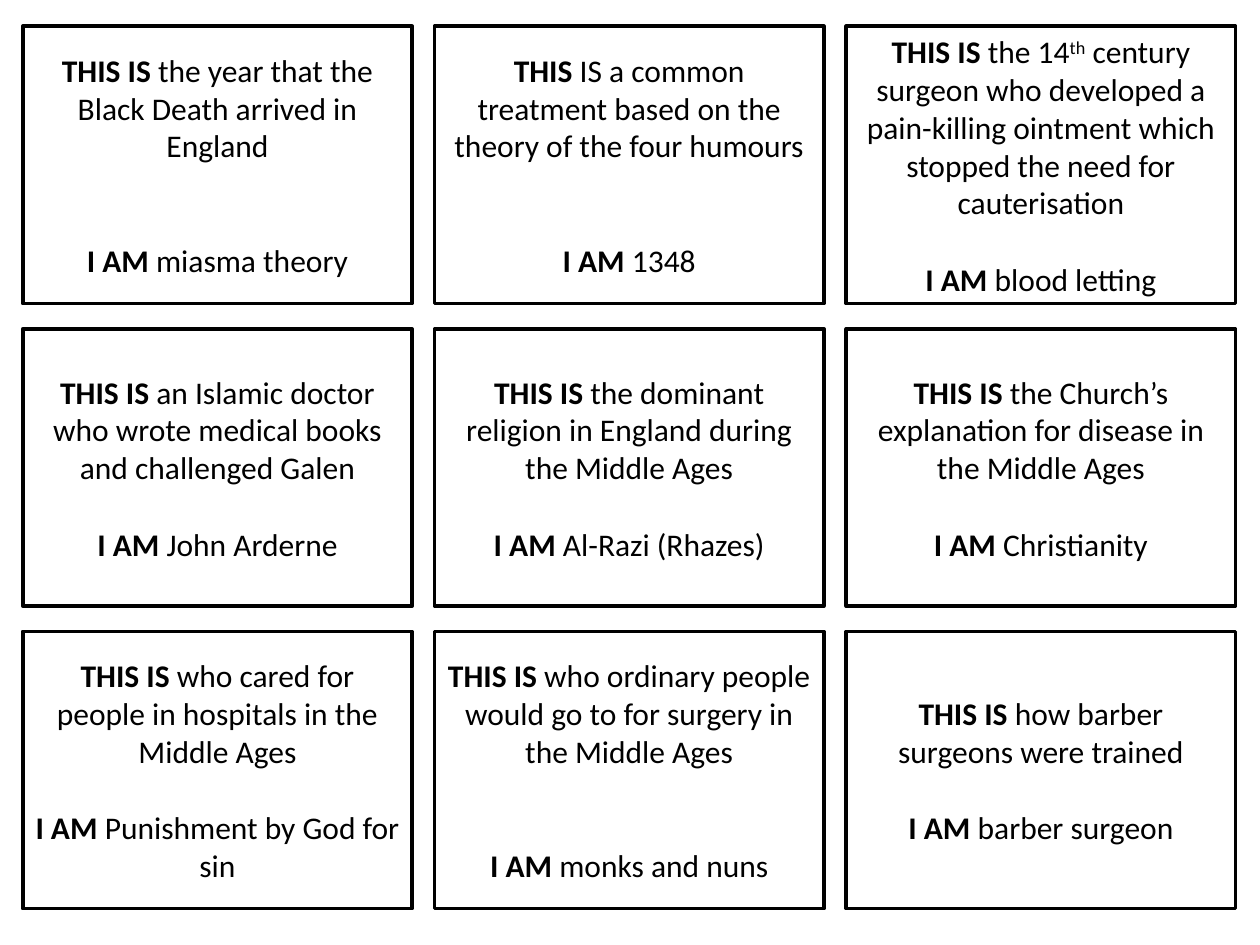
from pptx import Presentation
from pptx.dml.color import RGBColor
from pptx.enum.shapes import MSO_SHAPE
from pptx.enum.text import MSO_ANCHOR, PP_ALIGN
from pptx.util import Cm, Pt

RECTANGLE = MSO_SHAPE.RECTANGLE
MIDDLE = MSO_ANCHOR.MIDDLE
CENTER = PP_ALIGN.CENTER
BLACK = RGBColor(0x00, 0x00, 0x00)
WHITE = RGBColor(0xFF, 0xFF, 0xFF)
FONT = "Calibri"
LINE_HEIGHT = 22
COLUMNS = 3
LEFT, TOP = 0.46, 0.53
CARD_WIDTH, CARD_HEIGHT = 7.85, 5.59
COLUMN_PITCH, ROW_PITCH = 8.3, 6.1

CARDS = [
    ("THIS IS", [" the year that the Black Death arrived in England"], 2, " miasma theory"),
    ("THIS ", ["IS a common treatment based on the theory of the four humours"], 2, " 1348"),
    ("THIS IS", [" the 14", "th", " century surgeon who developed a pain-killing ointment "
                 "which stopped the need for cauterisation"], 1, " blood letting"),
    ("THIS IS", [" an Islamic doctor who wrote medical books and challenged Galen"], 1,
     " John Arderne"),
    ("THIS IS", [" the dominant religion in England during the Middle Ages"], 1,
     " Al-Razi (Rhazes)"),
    ("THIS IS", [" the Church’s explanation for disease in the Middle Ages"], 1,
     " Christianity"),
    ("THIS IS", [" who cared for people in hospitals in the Middle Ages"], 1,
     " Punishment by God for sin"),
    ("THIS IS", [" who ordinary people would go to for surgery in the Middle Ages"], 2,
     " monks and nuns"),
    ("THIS IS", [" how barber surgeons were trained"], 1, " barber surgeon"),
]


def add_run(paragraph, text, bold=False, superscript=False):
    """Add one styled run to a paragraph."""
    run = paragraph.add_run()
    run.text = text
    run.font.name = FONT
    run.font.size = Pt(18)
    run.font.bold = bold
    run.font.color.rgb = BLACK
    if superscript:
        run._r.get_or_add_rPr().set("baseline", "30000")


def add_card(slide, left, top, width, height, lead, clue, gap_lines, answer):
    """Draw one loop card with its clue above its answer."""
    card = slide.shapes.add_shape(RECTANGLE, left, top, width, height)
    card.shadow.inherit = False
    card.fill.solid()
    card.fill.fore_color.rgb = WHITE
    card.line.color.rgb = BLACK
    card.line.width = Pt(2)
    frame = card.text_frame
    frame.word_wrap = True
    frame.vertical_anchor = MIDDLE

    clue_line = frame.paragraphs[0]
    clue_line.alignment = CENTER
    add_run(clue_line, lead, bold=True)
    for part in clue:
        add_run(clue_line, part, superscript=part == "th")

    answer_line = frame.add_paragraph()
    answer_line.alignment = CENTER
    answer_line.space_before = Pt(gap_lines * LINE_HEIGHT)
    add_run(answer_line, "I AM", bold=True)
    add_run(answer_line, answer)


def add_card_grid(slide, left, top):
    """Lay the cards out in rows from the given corner."""
    for index, card in enumerate(CARDS):
        row, column = divmod(index, COLUMNS)
        add_card(slide, left + Cm(column * COLUMN_PITCH), top + Cm(row * ROW_PITCH),
                 Cm(CARD_WIDTH), Cm(CARD_HEIGHT), *card)


def main():
    """Build and save the slide of loop cards."""
    presentation = Presentation()
    presentation.slide_width = Cm(25.4)
    presentation.slide_height = Cm(19.05)
    slide = presentation.slides.add_slide(presentation.slide_layouts[6])
    add_card_grid(slide, Cm(LEFT), Cm(TOP))
    presentation.save("out.pptx")


if __name__ == "__main__":
    main()
